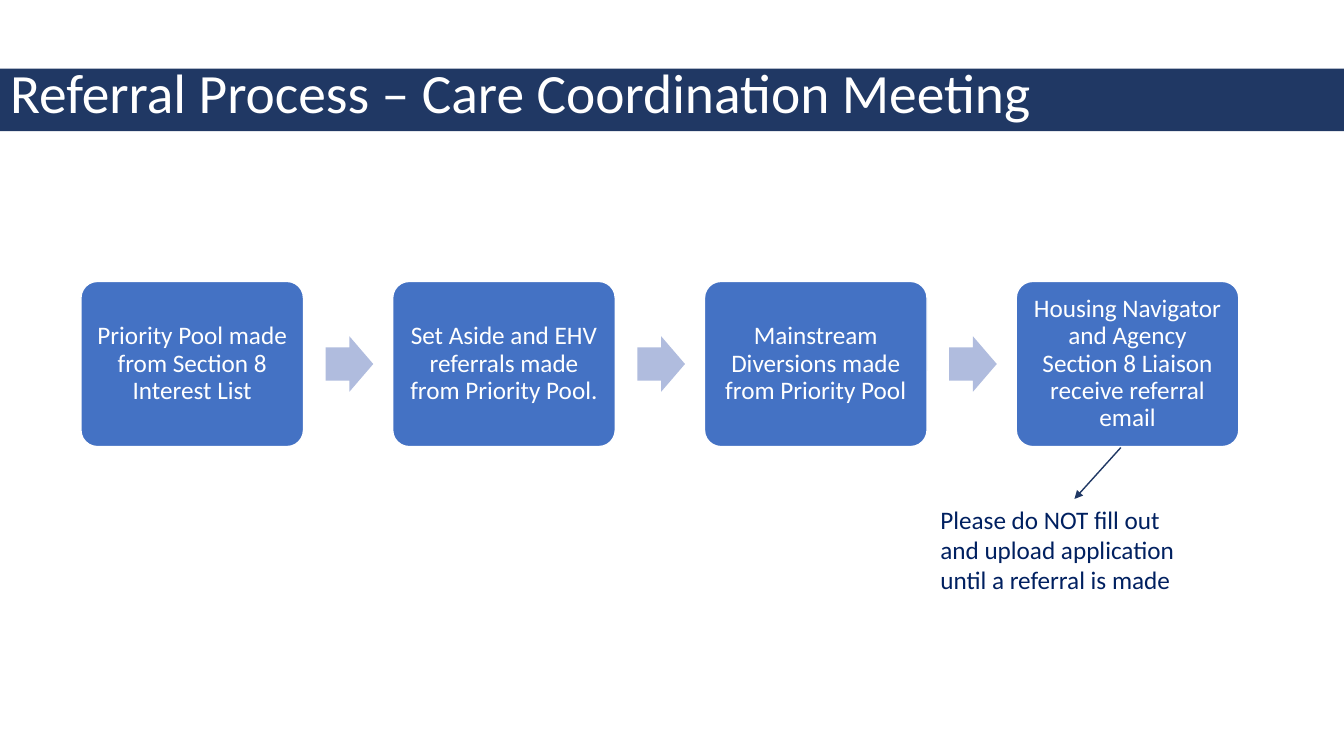
import pptx
import pptx.dml.color
import pptx.enum.shapes
import pptx.enum.text
import pptx.oxml
import pptx.oxml.ns
import pptx.util

Pt = pptx.util.Pt
Shape = pptx.enum.shapes.MSO_SHAPE
Anchor = pptx.enum.text.MSO_ANCHOR
Align = pptx.enum.text.PP_ALIGN

NAVY, BLUE, PALE, INK, WHITE = "203864", "4472C4", "B0BCDE", "002060", "FFFFFF"
STEPS = [
    "Priority Pool made from Section 8 Interest List",
    "Set Aside and EHV referrals made from Priority Pool.",
    "Mainstream Diversions made from Priority Pool",
    "Housing Navigator and Agency Section 8 Liaison receive referral email",
]
STEP_LEFT, STEP_TOP, STEP_WIDTH, STEP_HEIGHT = 57.8, 201, 159, 118
STEP_PITCH = 222.7
ARROW_OFFSET, ARROW_WIDTH, ARROW_HEIGHT = 174.8, 34, 39.6


def color(code):
    return pptx.dml.color.RGBColor.from_string(code)


def apply(target, values):
    for name, value in values.items():
        setattr(target, name, value)


class Painter:
    """Draws styled elements on the current page, with lengths in points."""

    def __init__(self, deck, font="Calibri"):
        self.font = font
        self.page = deck.slides.add_slide(deck.slide_layouts[5])

    def put_text(self, shape, text, size, ink, frame, para):
        apply(shape.text_frame, {"word_wrap": True, **frame})
        first = shape.text_frame.paragraphs[0]
        apply(first, para)
        span = first.add_run()
        span.text = text
        apply(span.font, {"name": self.font, "size": Pt(size)})
        span.font.color.rgb = color(ink)

    def title(self, text, left, top, width, height):
        bar = self.page.shapes.title
        apply(bar, {"left": Pt(left), "top": Pt(top), "width": Pt(width), "height": Pt(height)})
        bar.fill.solid()
        bar.fill.fore_color.rgb = color(NAVY)
        frame = {"vertical_anchor": Anchor.MIDDLE, "auto_size": pptx.enum.text.MSO_AUTO_SIZE.NONE}
        self.put_text(bar, text, 39.6, WHITE, frame, {"alignment": Align.LEFT, "line_spacing": 0.7})

    def shape(self, kind, left, top, width, height, fill, adjustments):
        shape = self.page.shapes.add_shape(kind, Pt(left), Pt(top), Pt(width), Pt(height))
        shape.shadow.inherit = False
        shape.fill.solid()
        shape.fill.fore_color.rgb = color(fill)
        shape.line.fill.background()
        for index, value in enumerate(adjustments):
            shape.adjustments[index] = value
        return shape

    def step(self, text, left):
        box = self.shape(Shape.ROUNDED_RECTANGLE, left, STEP_TOP, STEP_WIDTH, STEP_HEIGHT, BLUE, [0.1])
        box.line.color.rgb = color(WHITE)
        box.line.width = Pt(1)
        sides = ("left", "top", "right", "bottom")
        frame = {f"margin_{side}": Pt(5) for side in sides}
        frame["vertical_anchor"] = Anchor.MIDDLE
        self.put_text(box, text, 18, WHITE, frame, {"alignment": Align.CENTER, "line_spacing": 0.9})

    def arrow(self, left):
        top = STEP_TOP + (STEP_HEIGHT - ARROW_HEIGHT) / 2
        self.shape(Shape.RIGHT_ARROW, left, top, ARROW_WIDTH, ARROW_HEIGHT, PALE, [0.6, 0.5])

    def note(self, text, left, top, width, height):
        box = self.page.shapes.add_textbox(Pt(left), Pt(top), Pt(width), Pt(height))
        self.put_text(box, text, 18, INK, {}, {"alignment": Align.LEFT})

    def pointer(self, start, end):
        kind = pptx.enum.shapes.MSO_CONNECTOR.STRAIGHT
        line = self.page.shapes.add_connector(kind, *map(Pt, start + end))
        line.line.color.rgb = color(NAVY)
        line.line.width = Pt(1)
        properties = line._element.spPr
        outline = properties.find(pptx.oxml.ns.qn("a:ln"))
        namespace = pptx.oxml.ns.nsdecls("a")
        outline.append(pptx.oxml.parse_xml(f'<a:tailEnd {namespace} type="triangle"/>'))
        properties.append(pptx.oxml.parse_xml(f"<a:effectLst {namespace}/>"))


def main():
    deck = pptx.Presentation()
    apply(deck, {"slide_width": Pt(960), "slide_height": Pt(540)})
    painter = Painter(deck)
    painter.title("Referral Process – Care Coordination Meeting", 0, 49, 960, 44.6)
    for index, text in enumerate(STEPS):
        left = STEP_LEFT + index * STEP_PITCH
        painter.step(text, left)
        if index < len(STEPS) - 1:
            painter.arrow(left + ARROW_OFFSET)
    painter.note("Please do NOT fill out and upload application until a referral is made", 664.6, 356.4, 189.4, 72.7)
    painter.pointer((800.6, 319.7), (767.5, 356.4))
    deck.save("out.pptx")


if __name__ == "__main__":
    main()
